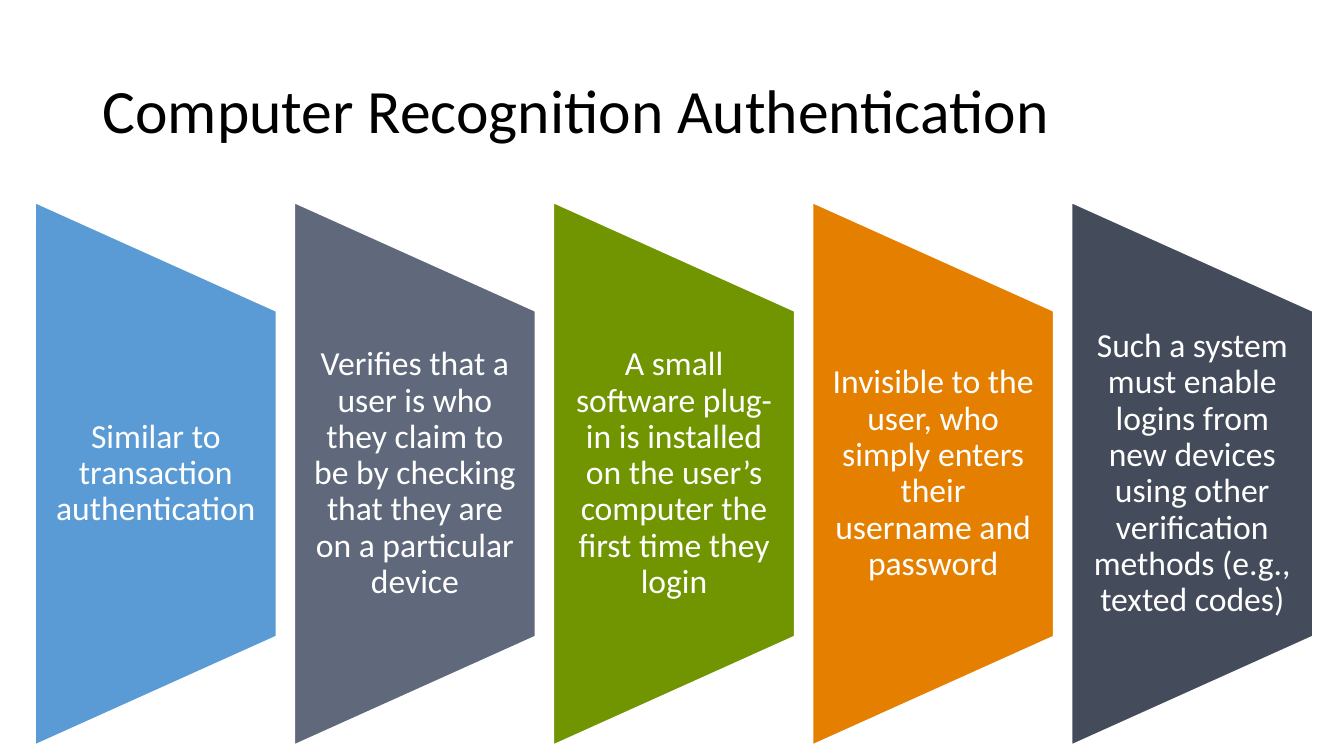
from pptx import Presentation
from pptx.dml.color import RGBColor
from pptx.enum.text import MSO_ANCHOR as Anchor, PP_ALIGN as Align
from pptx.util import Inches, Pt

WIDE, HIGH = Inches(13.33), Inches(7.5)
LEFT, TOP = Inches(0.35), Inches(2.01)
STEP, WIDTH, TALL = Inches(2.57), Inches(2.39), Inches(5.38)
SLANT = TALL // 5
PAD = Inches(0.17)

PANELS = [
    ("5B9BD5", "Similar to transaction authentication"),
    ("60697B", "Verifies that a user is who they claim to be by checking "
               "that they are on a particular device"),
    ("709500", "A small software plug-in is installed on the user’s "
               "computer the first time they login"),
    ("E57F00", "Invisible to the user, who simply enters their username "
               "and password"),
    ("444B5A", "Such a system must enable logins from new devices using "
               "other verification methods (e.g., texted codes)"),
]


def color(code):
    return RGBColor.from_string(code)


def write(shape, text, size, ink, align=Align.LEFT,
          pad=(Inches(0.1), Inches(0.05))):
    """Fill the shape with one paragraph; pad is the side and end inset."""
    frame = shape.text_frame
    frame.word_wrap = True
    frame.vertical_anchor = Anchor.MIDDLE
    frame.margin_left = frame.margin_right = pad[0]
    frame.margin_top = frame.margin_bottom = pad[1]
    para = frame.paragraphs[0]
    para.alignment = align
    para.line_spacing = 0.9
    run = para.add_run()
    run.text = text
    run.font.name = "Calibri"
    run.font.size = Pt(size)
    run.font.color.rgb = color(ink)


deck = Presentation()
deck.slide_width, deck.slide_height = WIDE, HIGH
slide = deck.slides.add_slide(deck.slide_layouts[6])
shapes = slide.shapes

title = shapes.add_textbox(Inches(0.92), Inches(0.4), Inches(11.5), Inches(1.45))
write(title, "Computer Recognition Authentication", 44, "000000")

for col, (fill, text) in enumerate(PANELS):
    x = LEFT + col * STEP
    right, base = x + WIDTH, TOP + TALL
    path = shapes.build_freeform(x, base)
    path.add_line_segments(
        [(x, TOP), (right, TOP + SLANT), (right, base - SLANT)], close=True)
    panel = path.convert_to_shape()
    panel.shadow.inherit = False
    panel.fill.solid()
    panel.fill.fore_color.rgb = color(fill)
    panel.line.color.rgb = color("FFFFFF")
    panel.line.width = Pt(1)
    write(panel, text, 24, "FFFFFF", align=Align.CENTER, pad=(PAD, SLANT))

deck.save("out.pptx")
